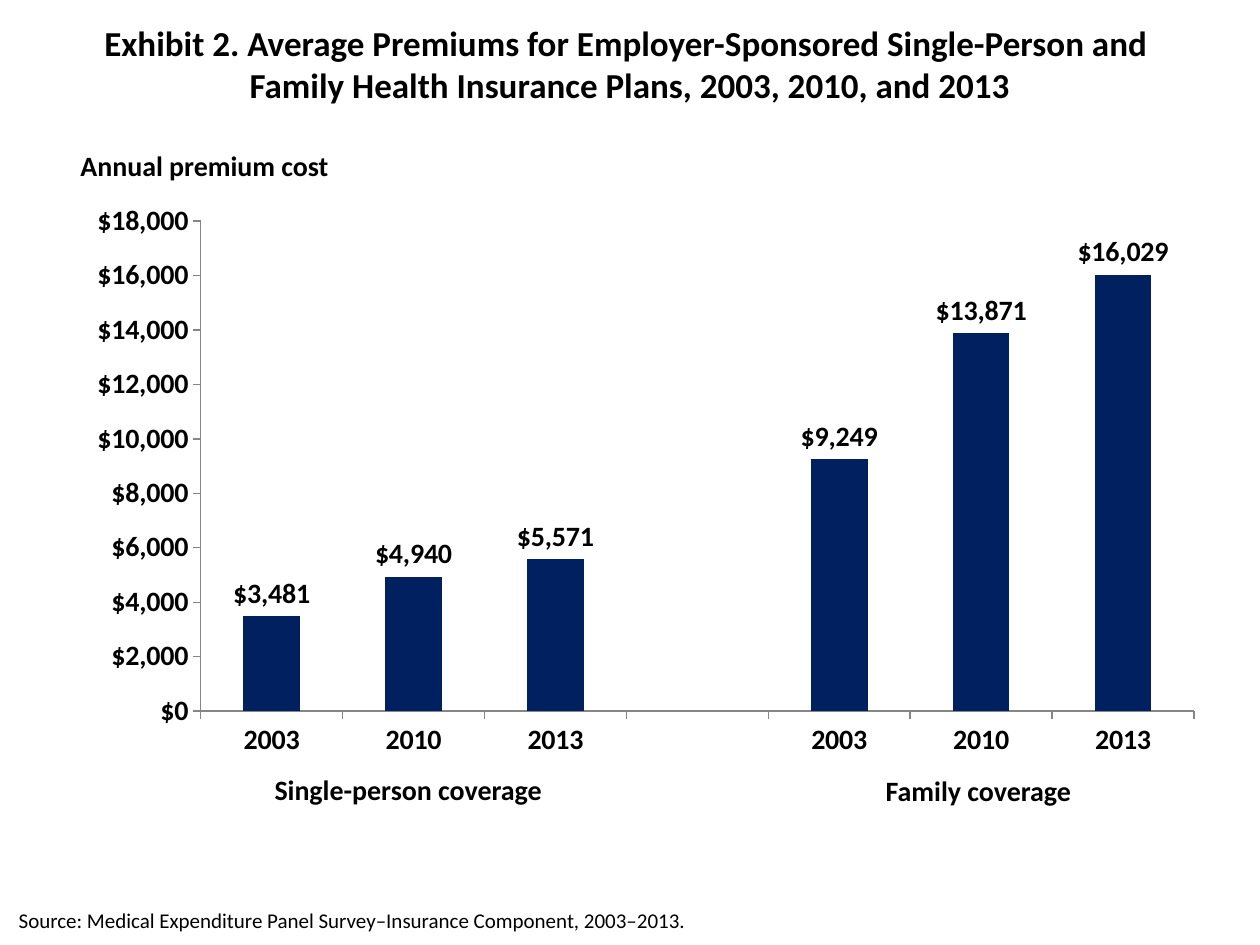
from lxml.etree import SubElement
from pptx import Presentation
from pptx.chart.data import CategoryChartData
from pptx.dml.color import RGBColor
from pptx.enum.chart import XL_CHART_TYPE, XL_LABEL_POSITION, XL_TICK_MARK
from pptx.enum.text import MSO_ANCHOR, PP_ALIGN
from pptx.oxml.ns import qn
from pptx.util import Inches, Pt

COLORS = {"text": "000000", "bar": "002060", "axis": "868686", "back": "FFFFFF"}
DOLLARS = '"$"#,##0'
BOLD = {"name": "Calibri", "size": Pt(16), "bold": True}
TITLE = {**BOLD, "size": Pt(20)}
NOTE = {**BOLD, "size": Pt(12), "bold": False}
PLOT = {"x": 0.13, "y": 0.159, "w": 0.845, "h": 0.741}
YEARS = ["2003", "2010", "2013"]
SINGLE = [3481, 4940, 5571]
FAMILY = [9249, 13871, 16029]


def color(name):
    return RGBColor.from_string(COLORS[name])


def format_font(font, values):
    for name, value in values.items():
        setattr(font, name, value)
    font.color.rgb = color("text")


def inches(box):
    return [Inches(length) for length in box]


def add_title(page, box, text):
    title = page.shapes.title
    title.left, title.top, title.width, title.height = inches(box)
    title.text_frame.vertical_anchor = MSO_ANCHOR.MIDDLE
    title.text_frame.text = text
    para = title.text_frame.paragraphs[0]
    para.alignment = PP_ALIGN.CENTER
    for span in para.runs:
        format_font(span.font, TITLE)


def add_label(page, box, text, values=BOLD, alignment=PP_ALIGN.LEFT):
    frame = page.shapes.add_textbox(*inches(box)).text_frame
    frame.word_wrap = True
    para = frame.paragraphs[0]
    para.alignment = alignment
    span = para.add_run()
    span.text = text
    format_font(span.font, values)


def set_plot_layout(chart):
    plot_area = chart._chartSpace.chart.plotArea
    layout = plot_area.find(qn("c:layout"))
    if layout is None:
        layout = SubElement(plot_area, qn("c:layout"))
        plot_area.insert(0, layout)
    manual = SubElement(layout, qn("c:manualLayout"))
    SubElement(manual, qn("c:layoutTarget")).set("val", "inner")
    for side in "xy":
        SubElement(manual, qn(f"c:{side}Mode")).set("val", "edge")
    for side, share in PLOT.items():
        SubElement(manual, qn(f"c:{side}")).set("val", str(share))


def format_axis(axis):
    axis.has_major_gridlines = False
    axis.major_tick_mark = XL_TICK_MARK.OUTSIDE
    axis.minor_tick_mark = XL_TICK_MARK.NONE
    axis.format.line.color.rgb = color("axis")
    axis.format.line.width = Pt(0.75)
    format_font(axis.tick_labels.font, BOLD)


def add_premium_chart(page, box):
    data = CategoryChartData(number_format=DOLLARS)
    data.categories = YEARS + [""] + YEARS
    data.add_series("Series 1", SINGLE + [None] + FAMILY)
    chart = page.shapes.add_chart(
        XL_CHART_TYPE.COLUMN_CLUSTERED, *inches(box), data
    ).chart
    chart.has_legend = False
    chart.has_title = False
    format_font(chart.font, {"name": "Arial", "size": Pt(18)})
    set_plot_layout(chart)

    for axis in (chart.category_axis, chart.value_axis):
        format_axis(axis)
    scale = chart.value_axis
    scale.minimum_scale, scale.maximum_scale, scale.major_unit = 0, 18000, 2000
    scale.tick_labels.number_format = DOLLARS
    scale.tick_labels.number_format_is_linked = False

    plot = chart.plots[0]
    plot.gap_width = 150
    plot.vary_by_categories = False
    bars = plot.series[0]
    bars.format.fill.solid()
    bars.format.fill.fore_color.rgb = color("bar")
    labels = bars.data_labels
    labels.show_value = True
    labels.position = XL_LABEL_POSITION.OUTSIDE_END
    labels.number_format = DOLLARS
    labels.number_format_is_linked = False
    format_font(labels.font, BOLD)


def main():
    deck = Presentation()
    deck.slide_width, deck.slide_height = Inches(10), Inches(7.5)
    page = deck.slides.add_slide(deck.slide_layouts[5])
    page.background.fill.solid()
    page.background.fill.fore_color.rgb = color("back")

    add_title(
        page,
        (0, 0.1, 10, 0.8),
        "Exhibit 2. Average Premiums for Employer-Sponsored Single-Person and \v"
        "Family Health Insurance Plans, 2003, 2010, and 2013",
    )
    add_premium_chart(page, (0.38, 0.92, 9.33, 5.25))
    center = PP_ALIGN.CENTER
    add_label(page, (1.62, 6.08, 3.29, 0.37), "Single-person coverage ", alignment=center)
    add_label(page, (6.1, 6.09, 3.38, 0.37), "Family coverage ", alignment=center)
    add_label(
        page,
        (0.05, 7.15, 7, 0.3),
        "Source: Medical Expenditure Panel Survey–Insurance Component, 2003–2013.",
        NOTE,
    )
    add_label(page, (0.54, 1.13, 3.29, 0.37), "Annual premium cost")
    deck.save("out.pptx")


if __name__ == "__main__":
    main()
